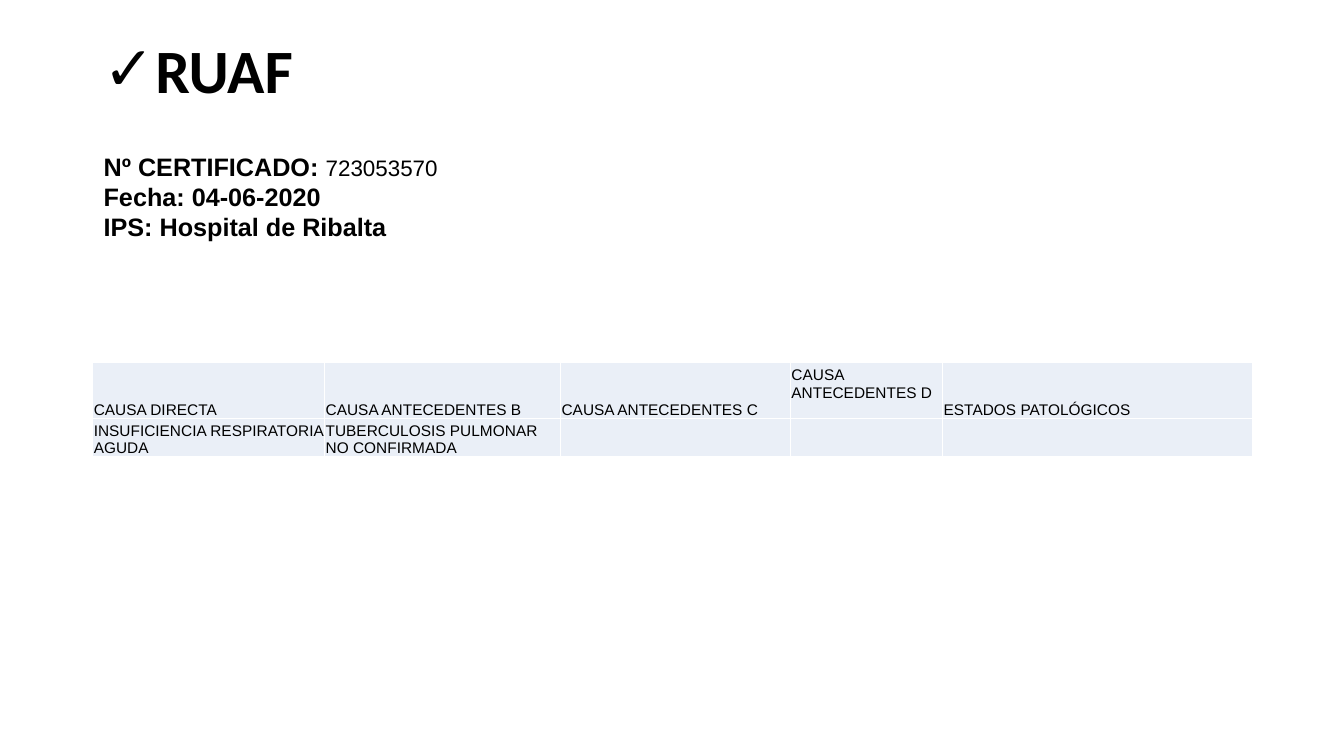
from lxml.etree import SubElement as Sub
from pptx import Presentation
from pptx.dml.color import RGBColor
from pptx.enum.text import MSO_ANCHOR as Anchor
from pptx.oxml.ns import qn
from pptx.util import Inches, Pt

TITLE = "RUAF"
FACTS = [
    [("Nº CERTIFICADO: ", 18, True), ("723053570", 16, False)],
    [("Fecha: 04-06-2020", 18, True)],
    [("IPS: Hospital de Ribalta", 18, True)],
]
CAUSES = [
    ["CAUSA DIRECTA", "CAUSA ANTECEDENTES B", "CAUSA ANTECEDENTES C",
     "CAUSA ANTECEDENTES D", "ESTADOS PATOLÓGICOS"],
    ["INSUFICIENCIA RESPIRATORIA AGUDA",
     "TUBERCULOSIS PULMONAR NO CONFIRMADA", "", "", ""],
]
WIDTHS = [2.3, 2.34, 2.28, 1.51, 3.07]
HEIGHTS = [0.55, 0.38]
RAISED = (0, 3)  # header cell whose text sits one line higher
BLACK, WHITE, PALE = "000000", "FFFFFF", "EAEFF7"


def paint(color, code):
    color.rgb = RGBColor.from_string(code)


def add_run(para, text, size, bold=False, face="Arial"):
    run = para.add_run()
    run.text = text
    run.font.size, run.font.bold, run.font.name = Pt(size), bold, face
    paint(run.font.color, BLACK)


def add_box(slide, left, top, width, height):
    frame = slide.shapes.add_textbox(*map(Inches, (left, top, width, height))).text_frame
    frame.word_wrap = True
    return frame


def add_tick(para):
    """Give the paragraph a hanging check mark."""
    props = para._p.get_or_add_pPr()
    props.set("marL", str(Inches(0.5)))
    props.set("indent", str(-Inches(0.5)))
    Sub(props, qn("a:buFont"), typeface="Arial")
    Sub(props, qn("a:buChar"), char="✓")


def add_edges(cell):
    props = cell._tc.get_or_add_tcPr()
    for side in "LRTB":
        line = Sub(props, qn(f"a:ln{side}"), w=str(Pt(1)))
        Sub(Sub(line, qn("a:solidFill")), qn("a:srgbClr"), val=WHITE)


def fill_cell(cell, text, raised):
    add_edges(cell)
    cell.fill.solid()
    paint(cell.fill.fore_color, PALE)
    cell.vertical_anchor = Anchor.BOTTOM
    cell.margin_left = cell.margin_right = cell.margin_top = Inches(0.01)
    cell.margin_bottom = Inches(0.17 if raised else 0)
    if text:
        add_run(cell.text_frame.paragraphs[0], text, 11)


def main():
    deck = Presentation()
    deck.slide_width, deck.slide_height = Inches(13.33), Inches(7.5)
    slide = deck.slides.add_slide(deck.slide_layouts[6])

    title = add_box(slide, 0.93, 0, 11.5, 1.45)
    title.vertical_anchor = Anchor.MIDDLE
    head = title.paragraphs[0]
    head.line_spacing = 0.9
    add_tick(head)
    add_run(head, TITLE, 44, True, "Calibri")

    facts = add_box(slide, 0.93, 1.45, 9.5, 1.01)
    for i, runs in enumerate(FACTS):
        para = facts.add_paragraph() if i else facts.paragraphs[0]
        for run in runs:
            add_run(para, *run)

    size = map(Inches, (0.92, 3.6, sum(WIDTHS), sum(HEIGHTS)))
    table = slide.shapes.add_table(len(HEIGHTS), len(WIDTHS), *size).table
    table.first_row = table.horz_banding = False
    for col, width in zip(table.columns, WIDTHS):
        col.width = Inches(width)
    for r, texts in enumerate(CAUSES):
        table.rows[r].height = Inches(HEIGHTS[r])
        for c, text in enumerate(texts):
            fill_cell(table.cell(r, c), text, (r, c) == RAISED)

    deck.save("out.pptx")


if __name__ == "__main__":
    main()
